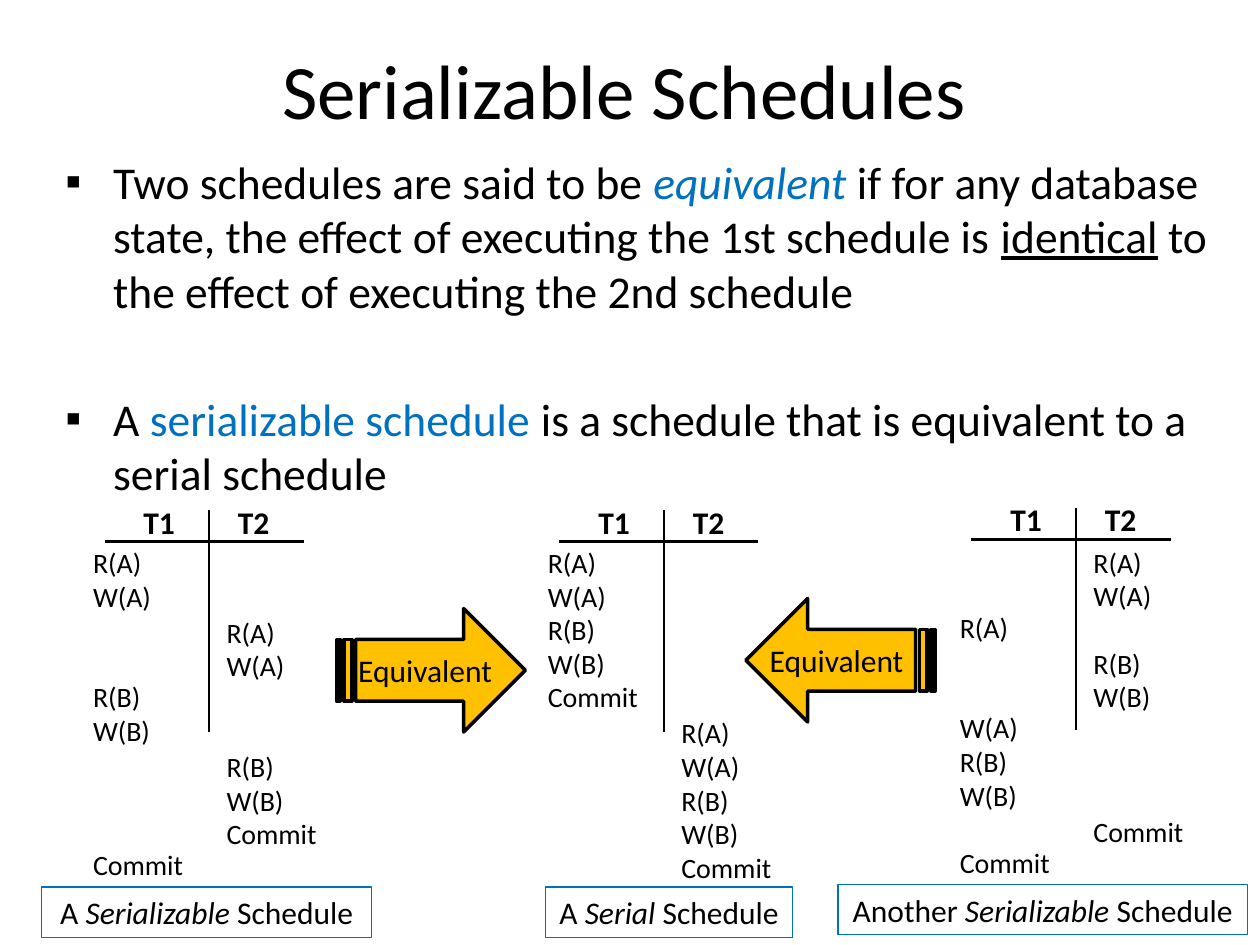
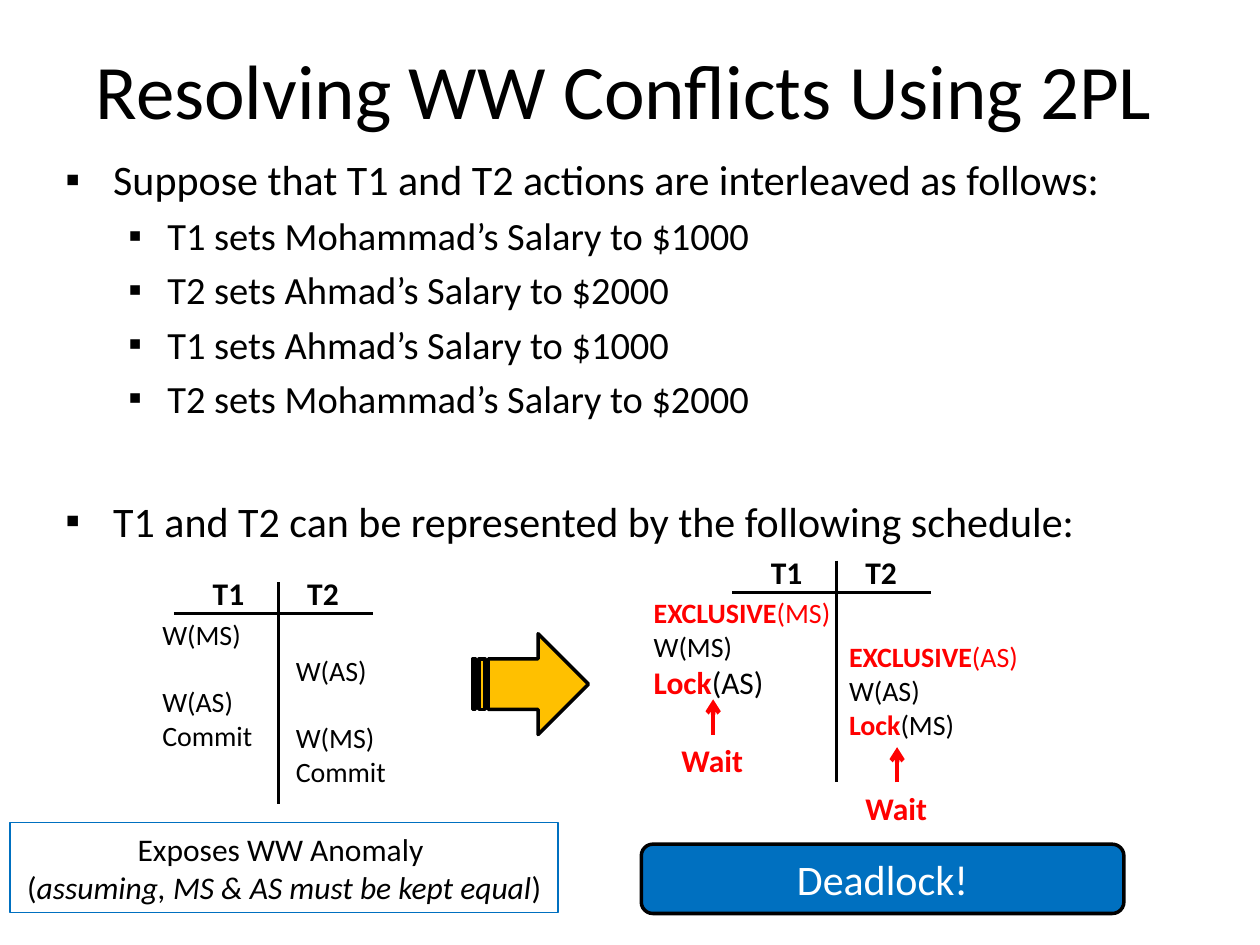
from dataclasses import dataclass
from lxml import etree
from pptx import Presentation
from pptx.dml.color import RGBColor
from pptx.enum.shapes import MSO_CONNECTOR, MSO_SHAPE
from pptx.enum.text import MSO_ANCHOR, PP_ALIGN
from pptx.oxml.ns import qn
from pptx.util import Inches, Pt


@dataclass(frozen=True)
class Theme:
    font: str = "Calibri"
    black: RGBColor = RGBColor(0, 0, 0)
    white: RGBColor = RGBColor(255, 255, 255)
    blue: RGBColor = RGBColor(0x00, 0x70, 0xC0)
    gold: RGBColor = RGBColor(0xFF, 0xC0, 0x00)
    red: RGBColor = RGBColor(0xFF, 0, 0)
    title: int = 44
    label: int = 18
    step: int = 16
    big: int = 24
    pitch: float = 19.2


LOOK = Theme()
INKS = {"B": LOOK.blue, "R": LOOK.red, "W": LOOK.white}
LEFT, MID = PP_ALIGN.LEFT, PP_ALIGN.CENTER

SERIAL = {
    "title": "Serializable Schedules",
    "points": [
        (0, 26, 0, [("Two schedules are said to be ", ""), ("equivalent", "Bi"),
                    (" if for any database state, the effect of executing the 1st schedule is ", ""),
                    ("identical", "u"), (" to the effect of executing the 2nd schedule", "")]),
        (0, 26, 42, [("A ", ""), ("serializable schedule ", "B"),
                     ("is a schedule that is equivalent to a serial schedule", "")]),
    ],
    "plans": [
        (1.66, 4.3,
         ["R(A)", "W(A)", "", "", "R(B)", "W(B)", "", "", "", "Commit"],
         ["", "", "R(A)", "W(A)", "", "", "R(B)", "W(B)", "Commit"]),
        (5.27, 4.3,
         ["R(A)", "W(A)", "R(B)", "W(B)", "Commit"],
         [""] * 5 + ["R(A)", "W(A)", "R(B)", "W(B)", "Commit"]),
        (8.54, 4.28,
         ["", "", "R(A)", "", "", "W(A)", "R(B)", "W(B)", "", "Commit"],
         ["R(A)", "W(A)", "", "R(B)", "W(B)", "", "", "", "Commit"]),
    ],
    "captions": [
        ((0.33, 7.04, 2.62, 0.4), [("A ", ""), ("Serializable", "i"), (" Schedule", "")]),
        ((4.33, 7.04, 1.96, 0.4), [("A ", ""), ("Serial", "i"), (" Schedule", "")]),
        ((6.65, 7.02, 3.25, 0.4), [("Another ", ""), ("Serializable", "i"), (" Schedule", "")]),
    ],
}

LOCKING = {
    "title": "Resolving WW Conflicts Using 2PL",
    "points": [
        (0, 24, 0, [("Suppose that T1 and T2 actions are interleaved as follows:", "")]),
        (1, 22, 4.8, [("T1 sets Mohammad’s Salary to $1000", "")]),
        (1, 22, 4.5, [("T2 sets Ahmad’s Salary to $2000", "")]),
        (1, 22, 4.5, [("T1 sets Ahmad’s Salary to $1000", "")]),
        (1, 22, 4.5, [("T2 sets Mohammad’s Salary to $2000", "")]),
        (0, 24, 42.5, [("T1 and T2 can be represented by the following schedule:", "")]),
    ],
    "plans": [
        (2.21, 4.87,
         ["W(MS)", "", "W(AS)", "Commit"],
         ["", "W(AS)", "", "W(MS)", "Commit"]),
        (6.64, 4.7, [], []),
    ],
    "captions": [
        ((0.08, 6.53, 4.35, 0.71),
         [("Exposes WW Anomaly ", ""), ("\n", ""), ("(", ""),
          ("assuming, MS & AS must be kept equal", "i"), (")", "")]),
    ],
}

LOCKS = [(5.09, 4.68, "MS", "AS", LOOK.label), (6.64, 5.03, "AS", "MS", LOOK.step)]
WAITS = [(5.66, 5.83), (7.12, 6.21)]


def write(para, runs, size, align=LEFT):
    para.alignment = align
    for text, marks in runs:
        if text == "\n":
            para.add_line_break()
            continue
        run = para.add_run()
        run.text = text
        font = run.font
        font.name, font.size = LOOK.font, Pt(size)
        font.bold, font.italic = "b" in marks, "i" in marks
        font.underline = "u" in marks
        font.color.rgb = next((INKS[m] for m in marks if m in INKS), LOOK.black)


def fill(frame, rows, align=LEFT):
    frame.word_wrap = True
    for spot, (runs, size, gap) in enumerate(rows):
        para = frame.add_paragraph() if spot else frame.paragraphs[0]
        para.space_before = Pt(gap)
        write(para, runs, size, align)


def text(slide, area, rows, align=LEFT):
    box = slide.shapes.add_textbox(*map(Inches, area))
    fill(box.text_frame, rows, align)
    return box


def line(slide, start, end, color=LOOK.black, width=1.5, arrow=False):
    link = slide.shapes.add_connector(
        MSO_CONNECTOR.STRAIGHT, *map(Inches, (*start, *end)))
    link.line.color.rgb, link.line.width = color, Pt(width)
    if arrow:
        etree.SubElement(link.line._get_or_add_ln(), qn("a:tailEnd"), type="arrow")
    etree.SubElement(link._element.spPr, qn("a:effectLst"))


def shape(slide, kind, area, paint, edge=LOOK.black, width=2):
    item = slide.shapes.add_shape(kind, *map(Inches, area))
    item.shadow.inherit = False
    if paint is None:
        item.fill.background()
    else:
        item.fill.solid()
        item.fill.fore_color.rgb = paint
    item.line.color.rgb, item.line.width = edge, Pt(width)
    item.text_frame.vertical_anchor = MSO_ANCHOR.MIDDLE
    return item


def arrow(slide, area):
    return shape(slide, MSO_SHAPE.STRIPED_RIGHT_ARROW, area, LOOK.gold)


def column(slide, left, top, steps):
    rows, gap, first = [], 0, 0
    for spot, step in enumerate(steps):
        if not step:
            gap += 1
            continue
        if not rows:
            first, gap = spot, 0
        rows.append(([(step, "")], LOOK.step, gap * LOOK.pitch))
        gap = 0
    if rows:
        unit = LOOK.pitch / 72
        high = (len(steps) - first) * unit + 0.1
        text(slide, (left, top + first * unit, 1, high), rows)


def plan(slide, x, y, one, two):
    line(slide, (x, y - 0.25), (x, y + 1.51))
    line(slide, (x - 0.83, y), (x + 0.75, y))
    for name, shift in (("T1", -0.62), ("T2", 0.13)):
        text(slide, (x + shift, y - 0.36, 0.5, 0.4), [([(name, "b")], LOOK.label, 0)])
    column(slide, x - 1.02, y - 0.02, one)
    column(slide, x + 0.04, y, two)


def bullet(para, level):
    props = para._p.get_or_add_pPr()
    left, hang = ((0.38, 0.38), (0.81, 0.31))[level]
    props.set("marL", str(Inches(left)))
    props.set("indent", str(-Inches(hang)))
    etree.SubElement(props, qn("a:buFont"), typeface="Arial")
    etree.SubElement(props, qn("a:buChar"), char="▪")
    para.level = level


def page(deck, data):
    slide = deck.slides.add_slide(deck.slide_layouts[5])
    head = slide.shapes.title
    head.left, head.top, head.width, head.height = map(Inches, (0.08, 0.08, 9.75, 1.25))
    head.text_frame.vertical_anchor = MSO_ANCHOR.MIDDLE
    fill(head.text_frame, [([(data["title"], "")], LOOK.title, 0)], MID)
    points = data["points"]
    body = text(slide, (0.42, 1.17, 9.45, 5.6),
                [(runs, size, gap) for _, size, gap, runs in points])
    for para, point in zip(body.text_frame.paragraphs, points):
        bullet(para, point[0])
    for item in data["plans"]:
        plan(slide, *item)
    for area, runs in data["captions"]:
        box = shape(slide, MSO_SHAPE.RECTANGLE, area, None, LOOK.blue, 0.75)
        fill(box.text_frame, [(runs, LOOK.label, 0)], MID)
    return slide


def main():
    deck = Presentation()
    deck.slide_width, deck.slide_height = Inches(10), Inches(7.5)

    slide = page(deck, SERIAL)
    same = [([("Equivalent", "")], LOOK.label, 0)]
    right = arrow(slide, (2.67, 4.83, 1.5, 0.98))
    right.text_frame.margin_left = right.text_frame.margin_right = 0
    fill(right.text_frame, same, MID)
    arrow(slide, (5.92, 4.75, 1.5, 0.98)).rotation = 180
    text(slide, (6.01, 5.04, 1.28, 0.4), same)

    slide = page(deck, LOCKING)
    arrow(slide, (3.75, 5.03, 0.92, 0.8))
    for left, top, held, want, size in LOCKS:
        text(slide, (left, top, 1.7, 0.94), [
            ([("EXCLUSIVE", "bR"), (f"({held})", "R")], LOOK.step, 0),
            ([(f"W({held})", "")], LOOK.step, 0),
            ([("Lock", "bR"), (f"({want})", "")], size, 0)])
    for x, y in WAITS:
        line(slide, (x, y), (x, y - 0.28), LOOK.red, 2.5, True)
        text(slide, (x - 0.35, y, 0.7, 0.4), [([("Wait", "bR")], LOOK.label, 0)])
    dead = shape(slide, MSO_SHAPE.ROUNDED_RECTANGLE, (5.09, 6.7, 3.83, 0.55), LOOK.blue)
    fill(dead.text_frame, [([("Deadlock!", "W")], LOOK.big, 0)], MID)
    deck.save("out.pptx")


if __name__ == "__main__":
    main()
